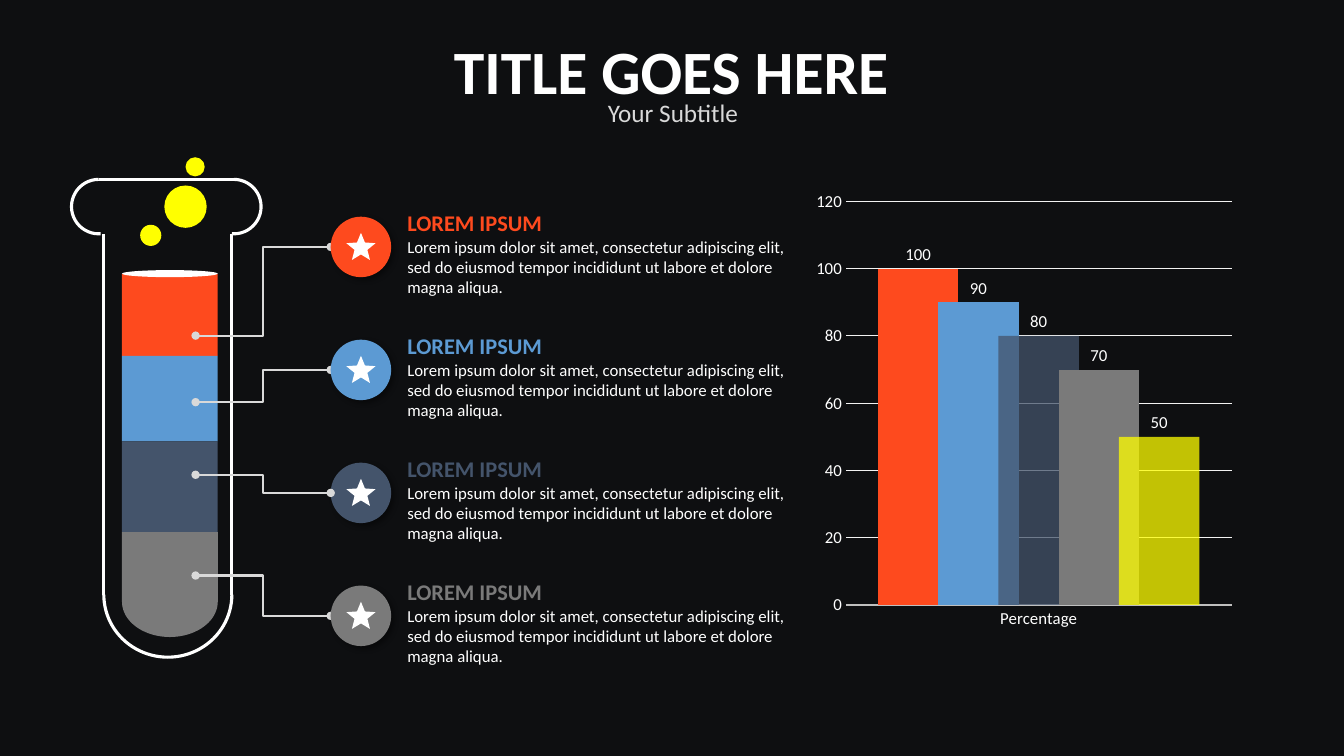
"""Build a test tube infographic slide with four notes and a column chart."""
from math import cos, pi, sin

from lxml.etree import SubElement
from pptx import Presentation
from pptx.chart.data import CategoryChartData
from pptx.dml.color import RGBColor
from pptx.enum.chart import XL_CHART_TYPE as ChartType
from pptx.enum.chart import XL_LABEL_POSITION as LabelPosition
from pptx.enum.chart import XL_TICK_MARK as TickMark
from pptx.enum.shapes import MSO_CONNECTOR as Connector
from pptx.enum.shapes import MSO_SHAPE as Shape
from pptx.enum.text import MSO_ANCHOR as Anchor
from pptx.enum.text import MSO_AUTO_SIZE as AutoSize
from pptx.enum.text import PP_ALIGN as Align
from pptx.oxml.ns import qn
from pptx.util import Inches, Pt

FONT = "Calibri"
BACKGROUND, WHITE, SILVER, YELLOW = "0E0F11", "FFFFFF", "D9D9D9", "FFFF00"
TITLE, SUBTITLE = "TITLE GOES HERE", "Your Subtitle"
HEADING = "LOREM IPSUM"
BODY = ("Lorem ipsum dolor sit amet, consectetur adipiscing elit, sed do eiusmod "
        "tempor incididunt ut labore et dolore magna aliqua.")

# colour, top of the liquid layer, height of the link's start, link in front
LAYERS = [
    ("FE4A1E", 2.72, 3.33, False),
    ("5C9AD3", 3.53, 3.99, False),
    ("44546B", 4.38, 4.71, True),
    ("7A7A7A", 5.28, 5.71, False),
]
BUBBLES = [(1.63, 1.84, 0.42), (1.39, 2.23, 0.21), (1.84, 1.56, 0.19)]
CATEGORY = "Percentage"
SERIES = [
    ("Series 1", 100, "FE4A1E", 100),
    ("Series 2", 90, "5C9AD3", 100),
    ("Series 3", 80, "44546B", 75),
    ("Series 4", 70, "7A7A7A", 100),
    ("Series 5", 50, YELLOW, 75),
]

LIQUID_LEFT, LIQUID_WIDTH = 1.21, 0.95
LIQUID_CURVE, LIQUID_BOTTOM = 5.97, 6.32
TUBE_LEFT, TUBE_RIGHT, TUBE_CURVE = 1.03, 2.3, 5.9
LIP_LEFT, LIP_RIGHT, LIP_TOP, LIP_SIZE = 0.71, 2.59, 1.78, 0.54
LINK_LEFT, BADGE_LEFT, BADGE_SIZE, NOTE_LEFT = 1.94, 3.28, 0.6, 3.97
FIRST_BADGE, ROW_PITCH = 2.15, 1.22
STAR_WIDTH, STAR_HEIGHT = 0.29, 0.27


def rgb(value):
    return RGBColor.from_string(value)


def inches(*lengths):
    return [Inches(length) for length in lengths]


def set_format(target, values):
    for name, value in values.items():
        setattr(target, name, value)


def set_font(font, size, color, bold=False):
    set_format(font, {"name": FONT, "size": Pt(size), "bold": bold})
    font.color.rgb = rgb(color)


def set_line(line, color, width):
    line.color.rgb = rgb(color)
    line.width = Pt(width)


def paint(shape, color):
    shape.shadow.inherit = False
    shape.fill.solid()
    shape.fill.fore_color.rgb = rgb(color)
    shape.line.fill.background()
    return shape


def add_solid(page, kind, box, color):
    return paint(page.shapes.add_shape(kind, *inches(*box)), color)


def add_arc(page, box, start, end):
    arc = page.shapes.add_shape(Shape.ARC, *inches(*box))
    arc.shadow.inherit = False
    arc.fill.background()
    set_line(arc.line, WHITE, 2.25)
    arc.adjustments[0], arc.adjustments[1] = start * 0.6, end * 0.6


def add_line(page, kind, ends, color, width):
    line = page.shapes.add_connector(kind, *inches(*ends))
    set_line(line.line, color, width)
    properties = line._element.spPr
    SubElement(properties, qn("a:effectLst"))
    return properties.find(qn("a:ln"))


def write(shape, paragraphs, margins, align):
    frame = shape.text_frame
    set_format(frame, {"word_wrap": True, "auto_size": AutoSize.NONE,
                       "vertical_anchor": Anchor.TOP})
    side, edge = inches(*margins)
    set_format(frame, {"margin_left": side, "margin_right": side,
                       "margin_top": edge, "margin_bottom": edge})
    for index, (text, size, color, bold) in enumerate(paragraphs):
        para = frame.add_paragraph() if index else frame.paragraphs[0]
        para.alignment = align
        span = para.add_run()
        span.text = text
        set_font(span.font, size, color, bold)


def add_heading(page):
    title = page.shapes.title
    left, top, width, height = inches(3.65, 0.28, 6.02, 0.84)
    set_format(title, {"left": left, "top": top, "width": width, "height": height})
    write(title, [(TITLE, 44, WHITE, True)], (0.1, 0.05), Align.CENTER)
    subtitle = page.shapes.add_textbox(*inches(4.41, 0.92, 4.53, 0.4))
    write(subtitle, [(SUBTITLE, 18, SILVER, False)], (0.1, 0.05), Align.CENTER)


def add_liquid(page):
    tops = [top for _, top, _, _ in LAYERS]
    for (color, top, _, _), below in zip(LAYERS, tops[1:]):
        add_solid(page, Shape.RECTANGLE,
                  (LIQUID_LEFT, top, LIQUID_WIDTH, below - top), color)
    radius = LIQUID_WIDTH / 2
    depth = LIQUID_BOTTOM - LIQUID_CURVE
    curve = [(LIQUID_LEFT + radius * (1 + cos(pi * step / 40)),
              LIQUID_CURVE + depth * sin(pi * step / 40)) for step in range(41)]
    outline = [(LIQUID_LEFT + LIQUID_WIDTH, tops[-1]), *curve, (LIQUID_LEFT, tops[-1])]
    points = [inches(*point) for point in outline]
    builder = page.shapes.build_freeform(*points[0])
    builder.add_line_segments(points[1:], close=True)
    paint(builder.convert_to_shape(), LAYERS[-1][0])
    add_solid(page, Shape.OVAL, (LIQUID_LEFT, 2.68, LIQUID_WIDTH, 0.07), WHITE)


def add_tube(page):
    lip_bottom = LIP_TOP + LIP_SIZE
    add_arc(page, (TUBE_LEFT, TUBE_CURVE - 0.62, TUBE_RIGHT - TUBE_LEFT, 1.24), 0, 180)
    add_arc(page, (LIP_RIGHT - LIP_SIZE, LIP_TOP, LIP_SIZE, LIP_SIZE), 270, 94)
    add_arc(page, (LIP_LEFT, LIP_TOP, LIP_SIZE, LIP_SIZE), 86, 270)
    walls = [(side, TUBE_CURVE, side, lip_bottom) for side in (TUBE_LEFT, TUBE_RIGHT)]
    rim = (LIP_RIGHT - LIP_SIZE / 2, LIP_TOP, LIP_LEFT + LIP_SIZE / 2, LIP_TOP)
    for ends in [*walls, rim]:
        add_line(page, Connector.STRAIGHT, ends, WHITE, 2.25)
    for left, top, size in BUBBLES:
        add_solid(page, Shape.OVAL, (left, top, size, size), YELLOW)


def add_links(page, in_front):
    for row, (_, _, start, front) in enumerate(LAYERS):
        if front == in_front:
            end = FIRST_BADGE + row * ROW_PITCH + BADGE_SIZE / 2
            line = add_line(page, Connector.ELBOW,
                            (LINK_LEFT, start, BADGE_LEFT, end), SILVER, 1.5)
            for tag in ("a:headEnd", "a:tailEnd"):
                SubElement(line, qn(tag), type="oval")


def add_notes(page):
    for row, (color, _, _, _) in enumerate(LAYERS):
        top = FIRST_BADGE + row * ROW_PITCH
        note = page.shapes.add_textbox(*inches(NOTE_LEFT, top - 0.1, 4.04, 0.94))
        write(note, [(HEADING, 16, color, True), (BODY, 12, WHITE, False)],
              (0.07, 0.03), Align.LEFT)
        badge = add_solid(page, Shape.OVAL, (BADGE_LEFT, top, BADGE_SIZE, BADGE_SIZE), color)
        effects = badge._element.spPr.find(qn("a:effectLst"))
        shadow = SubElement(effects, qn("a:outerShdw"), blurRad=str(Pt(4)),
                            dist=str(Pt(3)), dir="2700000", algn="tl", rotWithShape="0")
        shade = SubElement(shadow, qn("a:srgbClr"), val="000000")
        SubElement(shade, qn("a:alpha"), val="40000")
        star = add_solid(page, Shape.STAR_5_POINT,
                         (BADGE_LEFT + (BADGE_SIZE - STAR_WIDTH) / 2, top + 0.16,
                          STAR_WIDTH, STAR_HEIGHT), WHITE)
        star.adjustments[0] = 0.22


def add_columns(page):
    data = CategoryChartData()
    data.categories = [CATEGORY]
    for name, value, _, _ in SERIES:
        data.add_series(name, [value])
    chart = page.shapes.add_chart(ChartType.COLUMN_CLUSTERED,
                                  *inches(8.01, 1.81, 4.29, 4.52), data).chart
    set_format(chart, {"has_legend": False, "has_title": False})
    set_font(chart.font, 12, WHITE)
    plot = chart.plots[0]
    set_format(plot, {"gap_width": 80, "overlap": 25, "vary_by_categories": False})
    for series, (_, _, color, opacity) in zip(plot.series, SERIES):
        fill = series.format.fill
        fill.solid()
        fill.fore_color.rgb = rgb(color)
        if opacity < 100:
            shade = series._element.xpath("c:spPr/a:solidFill/a:srgbClr")[0]
            SubElement(shade, qn("a:alpha"), val=str(opacity * 1000))
        labels = series.data_labels
        set_format(labels, {"show_value": True, "position": LabelPosition.OUTSIDE_END})
        set_font(labels.font, 12, WHITE)
    for axis in (chart.category_axis, chart.value_axis):
        set_format(axis, {"major_tick_mark": TickMark.NONE, "minor_tick_mark": TickMark.NONE})
        set_font(axis.tick_labels.font, 12, WHITE)
    set_line(chart.category_axis.format.line, "BFBFBF", 1.25)
    scale = chart.value_axis
    set_format(scale, {"minimum_scale": 0, "maximum_scale": 120, "major_unit": 20})
    scale.format.line.fill.background()
    set_line(scale.major_gridlines.format.line, "F2F2F2", 0.75)


def main():
    deck = Presentation()
    deck.slide_width, deck.slide_height = inches(13.33, 7.5)
    page = deck.slides.add_slide(deck.slide_layouts[5])
    page.background.fill.solid()
    page.background.fill.fore_color.rgb = rgb(BACKGROUND)
    add_heading(page)
    add_liquid(page)
    add_tube(page)
    add_links(page, in_front=False)
    add_columns(page)
    add_notes(page)
    add_links(page, in_front=True)
    deck.save("out.pptx")


if __name__ == "__main__":
    main()
